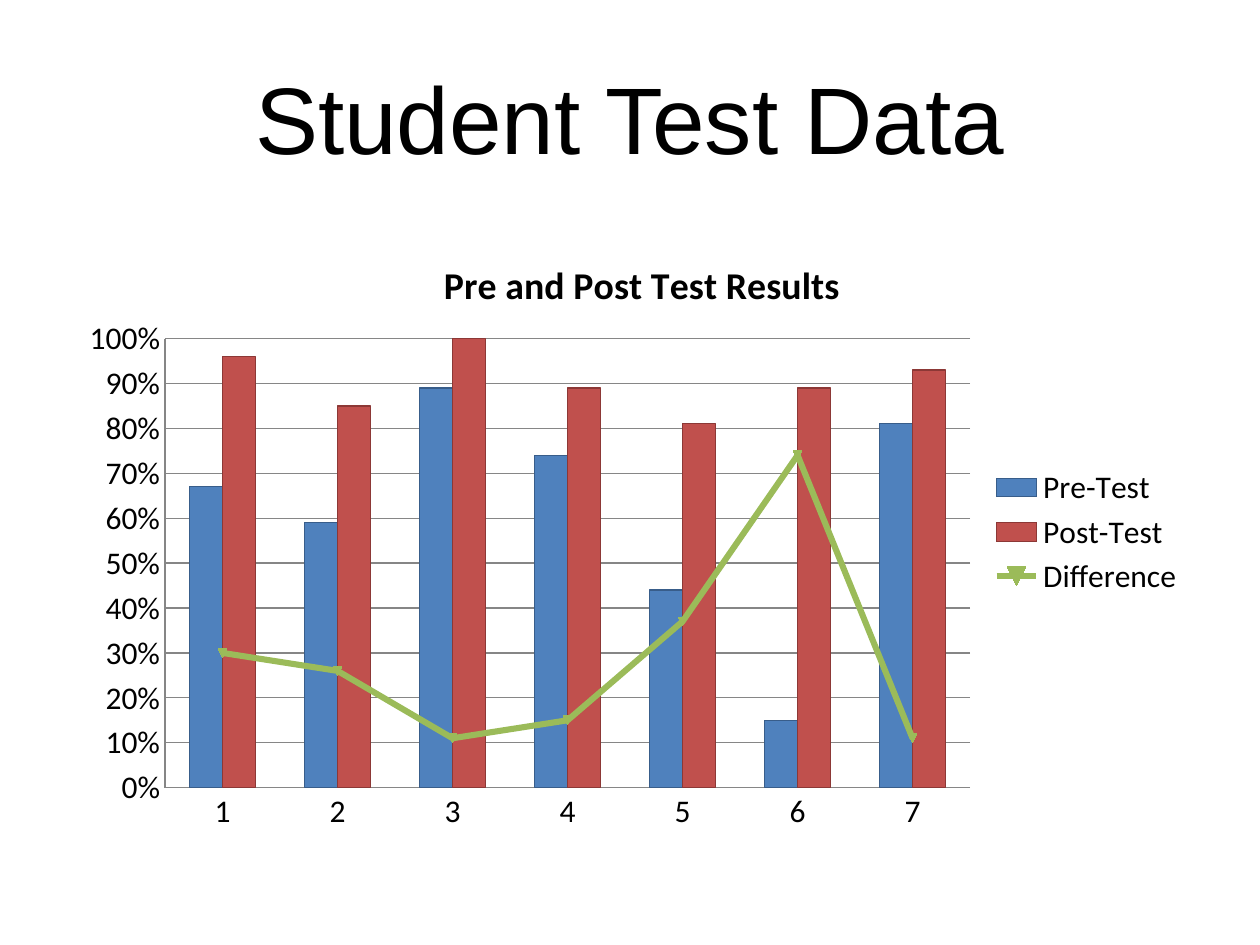
from lxml import etree
from pptx import Presentation
from pptx.chart.data import CategoryChartData
from pptx.dml.color import RGBColor
from pptx.enum.chart import XL_CHART_TYPE as ChartType, XL_LEGEND_POSITION as LegendPosition
from pptx.enum.chart import XL_TICK_MARK as TickMark
from pptx.enum.text import MSO_ANCHOR, PP_ALIGN
from pptx.oxml import parse_xml
from pptx.oxml.ns import nsdecls, qn
from pptx.util import Emu, Pt

PX = 914400 / 126
BLACK = RGBColor(0x00, 0x00, 0x00)
GREY = RGBColor(0x86, 0x86, 0x86)
BLUE, BLUE_EDGE = RGBColor(0x4F, 0x81, 0xBD), RGBColor(0x38, 0x5D, 0x8A)
RED, RED_EDGE = RGBColor(0xC0, 0x50, 0x4D), RGBColor(0x8C, 0x38, 0x36)
GREEN = RGBColor(0x9B, 0xBB, 0x59)


def px(*lengths):
    return [Emu(round(length * PX)) for length in lengths]


def manual_layout(target, **fractions):
    """Replace the layout of a chart part by fractions of the chart's size."""
    for old in target.findall(qn("c:layout")):
        target.remove(old)
    modes = '<c:xMode val="edge"/><c:yMode val="edge"/>'
    sizes = "".join(f'<c:{name} val="{value}"/>' for name, value in fractions.items())
    inner = '<c:layoutTarget val="inner"/>' if "w" in fractions else ""
    return parse_xml(f'<c:layout {nsdecls("c")}><c:manualLayout>{inner}{modes}{sizes}'
                     '</c:manualLayout></c:layout>')


deck = Presentation()
deck.slide_width, deck.slide_height = px(1260, 945)
page = deck.slides.add_slide(deck.slide_layouts[6])

# Slide title
box = page.shapes.add_textbox(*px(63, 38, 1134, 157))
frame = box.text_frame
frame.word_wrap = True
frame.vertical_anchor = MSO_ANCHOR.MIDDLE
frame.text = "Student Test Data"
para = frame.paragraphs[0]
para.alignment = PP_ALIGN.CENTER
span = para.runs[0]
span.font.name, span.font.size = "Arial", Pt(54)
span.font.color.rgb = BLACK

# Test results chart
data = CategoryChartData(number_format="0%")
data.categories = [str(number) for number in range(1, 8)]
data.add_series("Pre-Test", [0.67, 0.59, 0.89, 0.74, 0.44, 0.15, 0.81])
data.add_series("Post-Test", [0.96, 0.85, 1, 0.89, 0.81, 0.89, 0.93])
data.add_series("Difference", [0.3, 0.26, 0.11, 0.15, 0.37, 0.74, 0.11])
chart = page.shapes.add_chart(ChartType.COLUMN_CLUSTERED, *px(63, 220, 1134, 624), data).chart
chart.font.name, chart.font.size = "Calibri", Pt(18)
chart.font.color.rgb = BLACK

# Chart title
title = chart.chart_title
title.text_frame.text = "Pre and Post Test Results"
title_font = title.text_frame.paragraphs[0].runs[0].font
title_font.name, title_font.size, title_font.bold = "Calibri", Pt(21.6), True
title_font.color.rgb = BLACK
title_xml = title.text_frame._element.getparent().getparent()
title_layout = manual_layout(title_xml, x=0.33, y=0.05)
title_xml.find(qn("c:tx")).addnext(title_layout)

# Legend
chart.has_legend = True
chart.legend.position = LegendPosition.RIGHT
chart.legend.include_in_layout = False

# Axes
value_axis, category_axis = chart.value_axis, chart.category_axis
value_axis.minimum_scale, value_axis.maximum_scale = 0, 1
value_axis.major_unit = 0.1
value_axis.has_major_gridlines = True
value_axis.major_gridlines.format.line.color.rgb = GREY
value_axis.major_gridlines.format.line.width = Pt(0.75)
value_axis.tick_labels.number_format = "0%"
value_axis.tick_labels.number_format_is_linked = False
for axis in (value_axis, category_axis):
    axis.major_tick_mark = axis.minor_tick_mark = TickMark.NONE
    axis.format.line.color.rgb = GREY
    axis.format.line.width = Pt(0.75)

# Move the difference series to a line plot on the same axes
columns = chart.plots[0]
columns.gap_width, columns.overlap = 150, 0
columns.vary_by_categories = False
difference = columns.series[2]._element
bar_xml = difference.getparent()
for bar_only in difference.findall(qn("c:invertIfNegative")):
    difference.remove(bar_only)
line_xml = parse_xml(f'<c:lineChart {nsdecls("c")}><c:grouping val="standard"/>'
                     '<c:varyColors val="0"/></c:lineChart>')
line_xml.append(difference)
etree.SubElement(line_xml, qn("c:marker")).set("val", "1")
for axis_id in bar_xml.findall(qn("c:axId")):
    etree.SubElement(line_xml, qn("c:axId")).set("val", axis_id.get("val"))
bar_xml.addnext(line_xml)
plot_area = bar_xml.getparent()
plot_area.insert(0, manual_layout(plot_area, x=0.09, y=0.19, w=0.71, h=0.72))

# Series colours
for bars, fill, edge in zip(columns.series, (BLUE, RED), (BLUE_EDGE, RED_EDGE)):
    bars.format.fill.solid()
    bars.format.fill.fore_color.rgb = fill
    bars.format.line.color.rgb = edge
    bars.format.line.width = Pt(0.75)
line = chart.plots[1].series[0]
line.smooth = False
line.format.line.color.rgb = GREEN
line.format.line.width = Pt(3.5)

deck.save("out.pptx")
